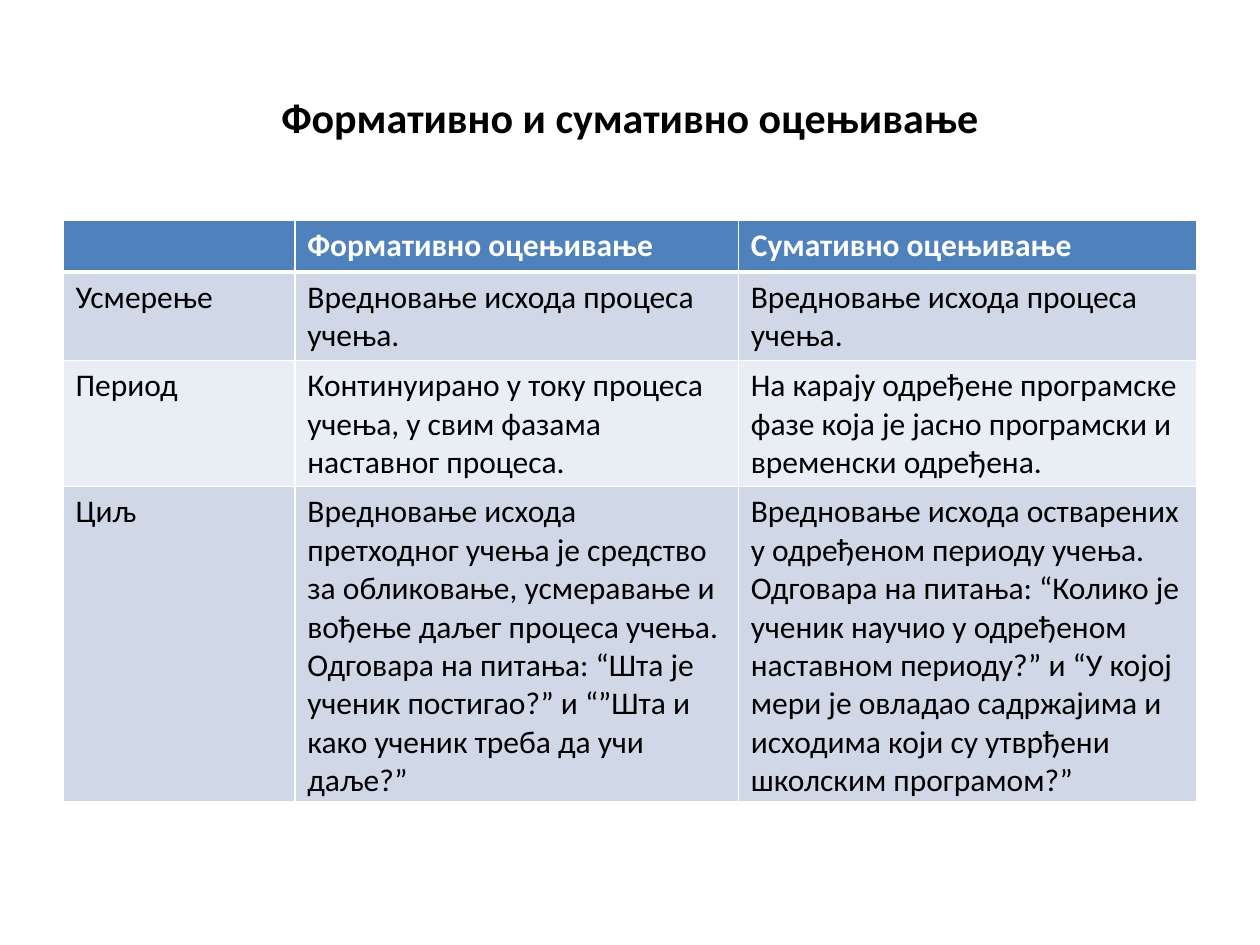
"""Build a slide comparing formative and summative assessment in a table."""
import pptx
import pptx.util
import pptx.oxml
import pptx.dml.color
import pptx.enum.text
from pptx.util import Inches

BLACK = pptx.dml.color.RGBColor(0x00, 0x00, 0x00)
WHITE = pptx.dml.color.RGBColor(0xFF, 0xFF, 0xFF)
HEADER_BLUE = pptx.dml.color.RGBColor(0x4F, 0x81, 0xBD)
BAND_DARK = pptx.dml.color.RGBColor(0xD0, 0xD8, 0xE8)
BAND_LIGHT = pptx.dml.color.RGBColor(0xE9, 0xED, 0xF4)

TITLE = "Формативно и сумативно оцењивање"
ROWS = [
    ("", "Формативно оцењивање", "Сумативно оцењивање"),
    ("Усмерење", "Вредновање исхода процеса учења.", "Вредновање исхода процеса учења."),
    (
        "Период",
        "Континуирано у току процеса учења, у свим фазама наставног процеса.",
        "На карају одређене програмске фазе која је јасно програмски и временски одређена.",
    ),
    (
        "Циљ",
        "Вредновање исхода претходног учења је средство за обликовање, усмеравање и "
        "вођење даљег процеса учења. Одговара на питања: “Шта је ученик постигао?” и "
        "“”Шта и како ученик треба да учи даље?”",
        "Вредновање исхода остварених у одређеном периоду учења. Одговара на питања: "
        "“Колико је ученик научио у одређеном наставном периоду?” и “У којој мери је "
        "овладао садржајима и исходима који су утврђени школским програмом?”",
    ),
]
COLUMN_WIDTHS = (1.84, 3.52, 3.64)
ROW_HEIGHT = 0.41
LEFT, TABLE_TOP, WIDTH = 0.5, 1.75, 9


def write_text(frame, text, size=18, color=BLACK, bold=False, align=None):
    frame.word_wrap = True
    para = frame.paragraphs[0]
    para.alignment = align
    para.font.size = pptx.util.Pt(size)
    if text:
        span = para.add_run()
        span.text = text
        span.font.name = "Calibri"
        span.font.size = pptx.util.Pt(size)
        span.font.bold = bold
        span.font.color.rgb = color


def set_borders(cell, **widths):
    properties = cell._tc.get_or_add_tcPr()
    for side in "LRTB":
        width = pptx.util.Pt(widths.get(side, 1))
        properties.append(pptx.oxml.parse_xml(
            '<a:ln%s xmlns:a="http://schemas.openxmlformats.org/drawingml/2006/main" w="%d">'
            '<a:solidFill><a:srgbClr val="%s"/></a:solidFill></a:ln%s>' % (side, width, WHITE, side)
        ))


def add_title(page):
    box = page.shapes.add_textbox(Inches(LEFT), Inches(0.3), Inches(WIDTH), Inches(1.25))
    box.text_frame.vertical_anchor = pptx.enum.text.MSO_ANCHOR.MIDDLE
    write_text(box.text_frame, TITLE, size=24, bold=True, align=pptx.enum.text.PP_ALIGN.CENTER)


def add_comparison(page):
    table = page.shapes.add_table(
        len(ROWS), len(COLUMN_WIDTHS), Inches(LEFT), Inches(TABLE_TOP),
        Inches(WIDTH), Inches(ROW_HEIGHT * len(ROWS)),
    ).table
    for column, width in zip(table.columns, COLUMN_WIDTHS):
        column.width = Inches(width)
    for index, texts in enumerate(ROWS):
        table.rows[index].height = Inches(ROW_HEIGHT)
        header = index == 0
        band = BAND_DARK if index % 2 else BAND_LIGHT
        for cell, text in zip(table.rows[index].cells, texts):
            write_text(cell.text_frame, text, color=WHITE if header else BLACK, bold=header)
            set_borders(cell, B=3 if header else 1, T=3 if index == 1 else 1)
            cell.fill.solid()
            cell.fill.fore_color.rgb = HEADER_BLUE if header else band


def main():
    deck = pptx.Presentation()
    deck.slide_width, deck.slide_height = Inches(10), Inches(7.5)
    page = deck.slides.add_slide(deck.slide_layouts[6])
    add_title(page)
    add_comparison(page)
    deck.save("out.pptx")


if __name__ == "__main__":
    main()
